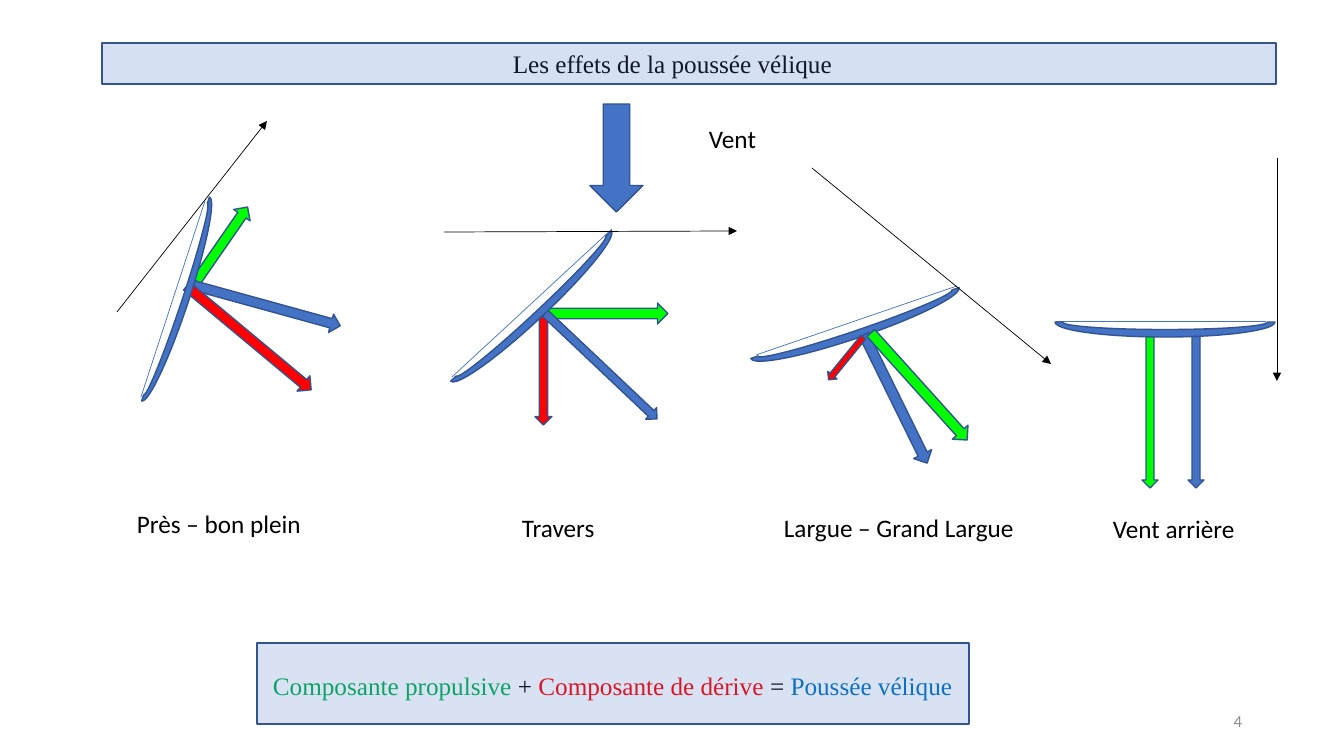
"""Build the slide on the effects of sail thrust at four points of sail."""
from lxml.etree import SubElement
from pptx import Presentation
from pptx.dml.color import RGBColor
from pptx.enum.shapes import MSO_CONNECTOR, MSO_SHAPE
from pptx.enum.text import MSO_ANCHOR, MSO_AUTO_SIZE, PP_ALIGN
from pptx.oxml.ns import qn
from pptx.util import Pt

PX = 914400 / 100.8
COLORS = {"blue": "4472C4", "outline": "325491", "green": "00FF00", "red": "FF0000",
          "black": "000000", "grey": "8C8C8C", "drive": "00B050", "thrust": "0070C0"}
RIGHT, DOWN, ARC = MSO_SHAPE.RIGHT_ARROW, MSO_SHAPE.DOWN_ARROW, MSO_SHAPE.BLOCK_ARC

TITLE = ("Les effets de la poussée vélique", (501, 43, 343, 40))
TITLE_BAR = (102, 43, 1174, 41)
FORMULA = [("Composante propulsive", "drive"), (" + ", "black"),
           ("Composante de dérive", "red"), (" = ", "black"), ("Poussée vélique", "thrust")]
FORMULA_TEXT, FORMULA_BOX = (263, 665, 722, 40), (257, 643, 712, 81)
WIND_ARROW = (590, 104, 53, 108)
LABELS = [("Vent", (699, 118, 68, 40)), ("Près – bon plein", (127, 503, 186, 40)),
          ("Travers", (512, 507, 110, 40)), ("Largue – Grand Largue", (774, 507, 277, 40)),
          ("Vent arrière", (1103, 508, 202, 40))]
PAGE = ("4", (950, 701, 302, 40))

SAILS = [
    {"course": (117, 312, 267, 121), "chord": (205, 201, 141, 397), "parts": [
        (RIGHT, "green", (177, 234, 90, 20), 304.7),
        (RIGHT, "blue", (190, 296, 153, 19), 15.4),
        (DOWN, "red", (239, 257, 20, 162), 309.8),
        (ARC, "blue", (68, 286, 215, 26), 108.4)]},
    {"course": (444, 232, 737, 231), "chord": (612, 229, 452, 377), "parts": [
        (RIGHT, "green", (545, 303, 123, 21), 0),
        (DOWN, "red", (535, 317, 17, 108), 0),
        (RIGHT, "blue", (524, 358, 154, 16), 43.4),
        (ARC, "blue", (421, 291, 220, 30), 136.9)]},
    {"course": (812, 168, 1051, 364), "chord": (957, 286, 756, 355), "parts": [
        (ARC, "blue", (745, 308, 220, 30), 161.2),
        (RIGHT, "blue", (824, 389, 143, 20), 63.8),
        (RIGHT, "green", (847, 376, 144, 21), 48),
        (DOWN, "red", (840, 331, 12, 55), 39.2)]},
    {"course": (1277, 158, 1277, 381), "chord": (1266, 321, 1056, 321), "parts": [
        (RIGHT, "blue", (1119, 403, 154, 16), 90),
        (RIGHT, "green", (1073, 403, 154, 16), 90),
        (ARC, "blue", (1055, 307, 220, 30), 180)]},
]


def emu(lengths):
    return [round(v * PX) for v in lengths]


def rgb(name):
    return RGBColor.from_string(COLORS[name])


def add_shape(s, kind, color, box, rotation=0, opacity=None):
    sp = s.shapes.add_shape(kind, *emu(box))
    sp.rotation = rotation
    sp.shadow.inherit = False
    sp.fill.solid()
    sp.fill.fore_color.rgb = rgb(color)
    sp.line.color.rgb = rgb("outline")
    sp.line.width = Pt(1)
    if opacity:
        clr = sp.fill._xPr.find(".//" + qn("a:srgbClr"))
        SubElement(clr, qn("a:alpha"), val=str(opacity * 1000))


def add_line(s, ends, color, arrow=False):
    cx = s.shapes.add_connector(MSO_CONNECTOR.STRAIGHT, *emu(ends))
    cx.line.color.rgb = rgb(color)
    cx.line.width = Pt(0.5)
    if arrow:
        SubElement(cx.line._get_or_add_ln(), qn("a:tailEnd"), type="triangle")
    SubElement(cx._element.spPr, qn("a:effectLst"))


def style(p, font, size, color=None):
    p.font.name, p.font.size = font, Pt(size)
    if color:
        p.font.color.rgb = rgb(color)


def add_text(s, box, text=""):
    tf = s.shapes.add_textbox(*emu(box)).text_frame
    tf.word_wrap = True
    tf.text = text
    return tf


def main():
    prs = Presentation()
    prs.slide_width, prs.slide_height = emu((1344, 756))
    s = prs.slides.add_slide(prs.slide_layouts[5])

    title = s.shapes.title
    title.left, title.top, title.width, title.height = emu(TITLE[1])
    tf = title.text_frame
    tf.text = TITLE[0]
    tf.word_wrap = False
    tf.auto_size = MSO_AUTO_SIZE.NONE
    tf.vertical_anchor = MSO_ANCHOR.MIDDLE
    style(tf.paragraphs[0], "Times New Roman", 18, "black")
    add_shape(s, MSO_SHAPE.RECTANGLE, "blue", TITLE_BAR, opacity=22)

    p = add_text(s, FORMULA_TEXT).paragraphs[0]
    style(p, "Times New Roman", 18)
    for text, color in FORMULA:
        r = p.add_run()
        r.text = text
        r.font.color.rgb = rgb(color)
    add_shape(s, MSO_SHAPE.RECTANGLE, "blue", FORMULA_BOX, opacity=20)

    add_shape(s, DOWN, "blue", WIND_ARROW)
    for sail in SAILS:
        add_line(s, sail["chord"], "blue")
        for part in sail["parts"]:
            add_shape(s, *part)
        add_line(s, sail["course"], "black", arrow=True)

    for text, box in LABELS:
        style(add_text(s, box, text).paragraphs[0], "Calibri", 18, "black")

    tf = add_text(s, PAGE[1], PAGE[0])
    tf.vertical_anchor = MSO_ANCHOR.MIDDLE
    tf.paragraphs[0].alignment = PP_ALIGN.RIGHT
    style(tf.paragraphs[0], "Calibri", 12, "grey")

    prs.save("out.pptx")


if __name__ == "__main__":
    main()
